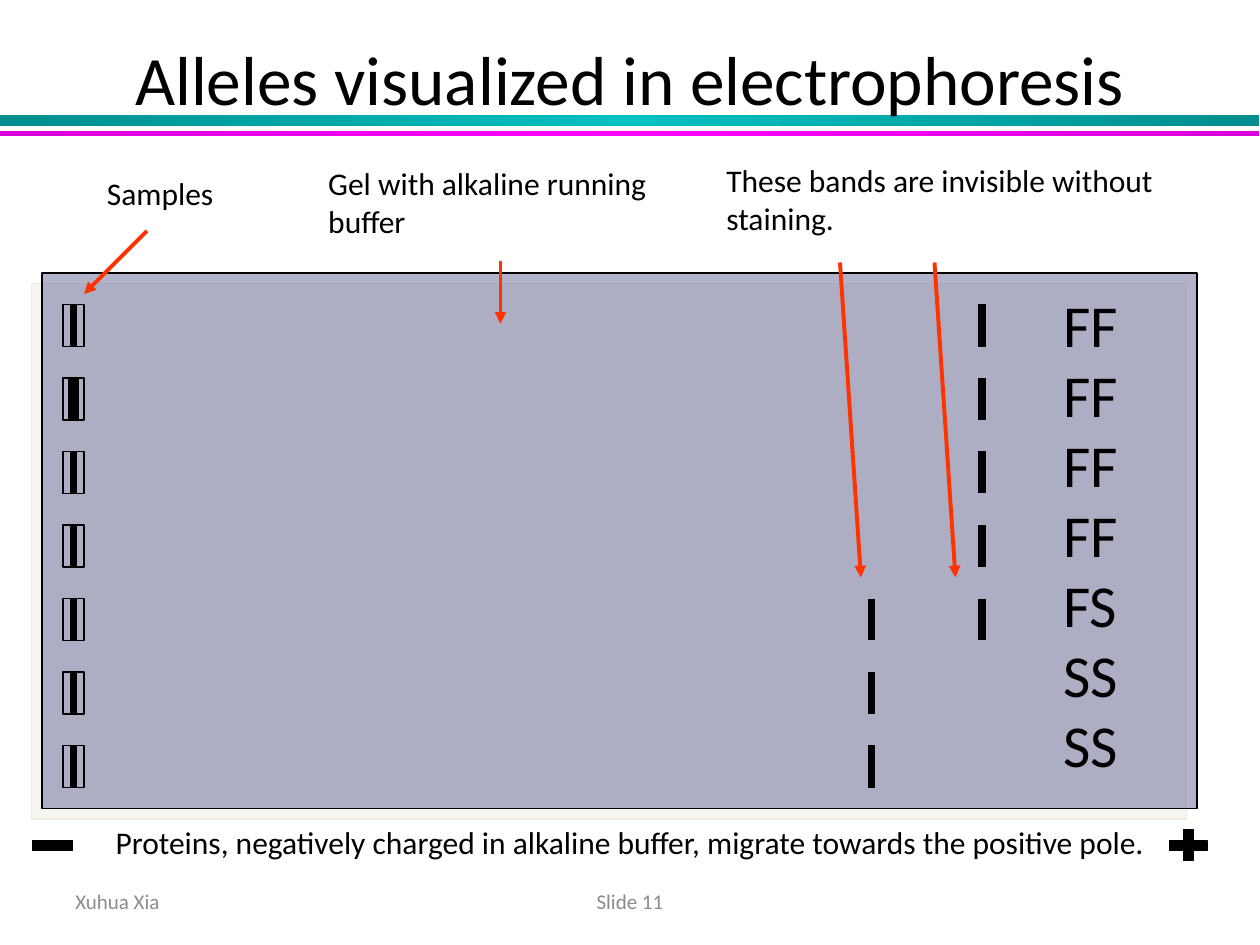
from copy import deepcopy
from dataclasses import dataclass
from typing import Any, Optional

from lxml.etree import SubElement
from pptx import Presentation
from pptx.dml.color import RGBColor
from pptx.enum.shapes import MSO_CONNECTOR, MSO_SHAPE
from pptx.enum.text import MSO_ANCHOR, PP_ALIGN
from pptx.oxml.ns import qn
from pptx.util import Pt


@dataclass(frozen=True)
class Theme:
    font: str = "Calibri"
    ink: str = "000000"
    footer: str = "8C8C8C"
    gel: str = "666699"
    gel_shadow: str = "EEECE1"
    arrow: str = "FF3300"
    teal: tuple = ("008E8E", "00C0C0", "008E8E")
    magenta: tuple = ("DA00DA", "FF00FF", "DA00DA")
    title_size: float = 39.6
    genotype_size: float = 34
    label_size: float = 18
    footer_size: float = 12


THEME = Theme()


@dataclass(frozen=True)
class Box:
    left: float
    top: float
    width: float
    height: float

    def lengths(self) -> tuple:
        return Pt(self.left), Pt(self.top), Pt(self.width), Pt(self.height)


@dataclass(frozen=True)
class Label:
    lines: tuple
    box: Box
    size: float = THEME.label_size
    color: str = THEME.ink
    align: Any = PP_ALIGN.LEFT
    anchor: Any = MSO_ANCHOR.TOP
    spacing: Optional[float] = None


@dataclass(frozen=True)
class Segment:
    x1: float
    y1: float
    x2: float
    y2: float


def apply_format(target: Any, values: dict) -> None:
    for name, value in values.items():
        setattr(target, name, value)


def write_text(shape: Any, label: Label) -> None:
    frame = shape.text_frame
    apply_format(frame, {"word_wrap": True, "vertical_anchor": label.anchor})
    frame.text = "\n".join(label.lines)
    for paragraph in frame.paragraphs:
        apply_format(paragraph, {"alignment": label.align, "line_spacing": label.spacing})
        apply_format(paragraph.runs[0].font, {"name": THEME.font, "size": Pt(label.size)})
        paragraph.runs[0].font.color.rgb = RGBColor.from_string(label.color)


def add_label(slide: Any, label: Label) -> None:
    write_text(slide.shapes.add_textbox(*label.box.lengths()), label)


def add_title(slide: Any, label: Label) -> None:
    title = slide.shapes.title
    names = ("left", "top", "width", "height")
    apply_format(title, dict(zip(names, label.box.lengths())))
    write_text(title, label)
    title.element.getparent().append(title.element)


def add_figure(slide: Any, kind: Any, box: Box, fill: Optional[str] = None,
               line_width: float = 0.75) -> Any:
    shape = slide.shapes.add_shape(kind, *box.lengths())
    shape.shadow.inherit = False
    if fill:
        shape.fill.solid()
        shape.fill.fore_color.rgb = RGBColor.from_string(fill)
    else:
        shape.fill.background()
    shape.line.color.rgb = RGBColor.from_string(THEME.ink)
    shape.line.width = Pt(line_width)
    return shape


def add_stripe(slide: Any, box: Box, colors: tuple) -> None:
    stripe = add_figure(slide, MSO_SHAPE.RECTANGLE, box)
    stripe.line.fill.background()
    stripe.fill.gradient()
    stripe.fill.gradient_angle = 0
    stop_list = stripe.element.find(".//" + qn("a:gsLst"))
    stop_list.append(deepcopy(stop_list[0]))
    for stop, color, position in zip(stripe.fill.gradient_stops, colors, (0, 0.5, 1)):
        stop.color.rgb = RGBColor.from_string(color)
        stop.position = position


def add_gel(slide: Any, box: Box) -> None:
    gel = add_figure(slide, MSO_SHAPE.RECTANGLE, box, THEME.gel)
    properties = gel.element.spPr
    fill_color = properties.find(qn("a:solidFill"))[0]
    SubElement(fill_color, qn("a:alpha"), val="50000")
    shadow = SubElement(properties.find(qn("a:effectLst")), qn("a:outerShdw"),
                        dist=str(Pt(8.5)), dir="8100000", algn="ctr", rotWithShape="0")
    SubElement(shadow, qn("a:srgbClr"), val=THEME.gel_shadow)


def add_line(slide: Any, segment: Segment, color: str, width: float) -> Any:
    line = slide.shapes.add_connector(
        MSO_CONNECTOR.STRAIGHT, Pt(segment.x1), Pt(segment.y1), Pt(segment.x2), Pt(segment.y2))
    line.line.color.rgb = RGBColor.from_string(color)
    line.line.width = Pt(width)
    SubElement(line.element.spPr, qn("a:effectLst"))
    return line


def add_arrow(slide: Any, segment: Segment) -> None:
    arrow = add_line(slide, segment, THEME.arrow, 2.25)
    SubElement(arrow.line._get_or_add_ln(), qn("a:tailEnd"), type="triangle")


def add_lane(slide: Any, top: float, genotype: str, sample_width: float) -> None:
    height = 24
    well = add_figure(slide, MSO_SHAPE.RECTANGLE, Box(36, top, 12, height), line_width=1)
    sample = add_line(slide, Segment(42, top, 42, top + height), THEME.ink, sample_width)
    sample.begin_connect(well, 0)
    sample.end_connect(well, 2)
    for allele, x in BAND_X.items():
        if allele in genotype:
            add_line(slide, Segment(x, top, x, top + height), THEME.ink, 4.5)


GENOTYPES = ("FF", "FF", "FF", "FF", "FS", "SS", "SS")
BAND_X = {"S": 498, "F": 561}
HEAVY_LANE = 1

TITLE = Label(("Alleles visualized in electrophoresis",), Box(36, 21.6, 648, 46),
              THEME.title_size, align=PP_ALIGN.CENTER, anchor=MSO_ANCHOR.MIDDLE)
LABELS = (
    Label(("Xuhua Xia",), Box(36, 500.5, 168, 28.75), THEME.footer_size,
          THEME.footer, anchor=MSO_ANCHOR.MIDDLE),
    Label(("Slide 11",), Box(246, 500.5, 228, 28.75), THEME.footer_size,
          THEME.footer, PP_ALIGN.CENTER, MSO_ANCHOR.MIDDLE),
    Label(("Gel with alkaline running buffer",), Box(180.5, 90, 210, 65.5)),
    Label(("Samples",), Box(54, 96, 108, 36)),
    Label(("These bands are invisible without staining.",), Box(408, 88.5, 288, 65)),
    Label(("Proteins, negatively charged in alkaline buffer, "
           "migrate towards the positive pole.",), Box(59, 466.5, 607, 29)),
    Label(GENOTYPES, Box(600.5, 163, 59, 296), THEME.genotype_size, spacing=0.98),
)
ARROWS = (
    Segment(84, 132, 48, 168),
    Segment(286, 149, 286, 185),
    Segment(480, 150, 492, 330),
    Segment(534, 150, 546, 330),
)


def main() -> None:
    presentation = Presentation()
    apply_format(presentation, {"slide_width": Pt(720), "slide_height": Pt(540)})
    slide = presentation.slides.add_slide(presentation.slide_layouts[5])
    add_stripe(slide, Box(0, 66, 719.5, 6), THEME.teal)
    add_stripe(slide, Box(0, 75, 719.5, 3), THEME.magenta)
    add_title(slide, TITLE)
    add_gel(slide, Box(24, 156, 660, 306))
    for row, genotype in enumerate(GENOTYPES):
        add_lane(slide, 174 + 42 * row, genotype, 6 if row == HEAVY_LANE else 4.5)
    for arrow in ARROWS:
        add_arrow(slide, arrow)
    add_figure(slide, MSO_SHAPE.MATH_MINUS, Box(14.5, 471, 31, 24), THEME.ink)
    add_figure(slide, MSO_SHAPE.MATH_PLUS, Box(664.5, 471, 29, 24), THEME.ink)
    for label in LABELS:
        add_label(slide, label)
    presentation.save("out.pptx")


if __name__ == "__main__":
    main()
